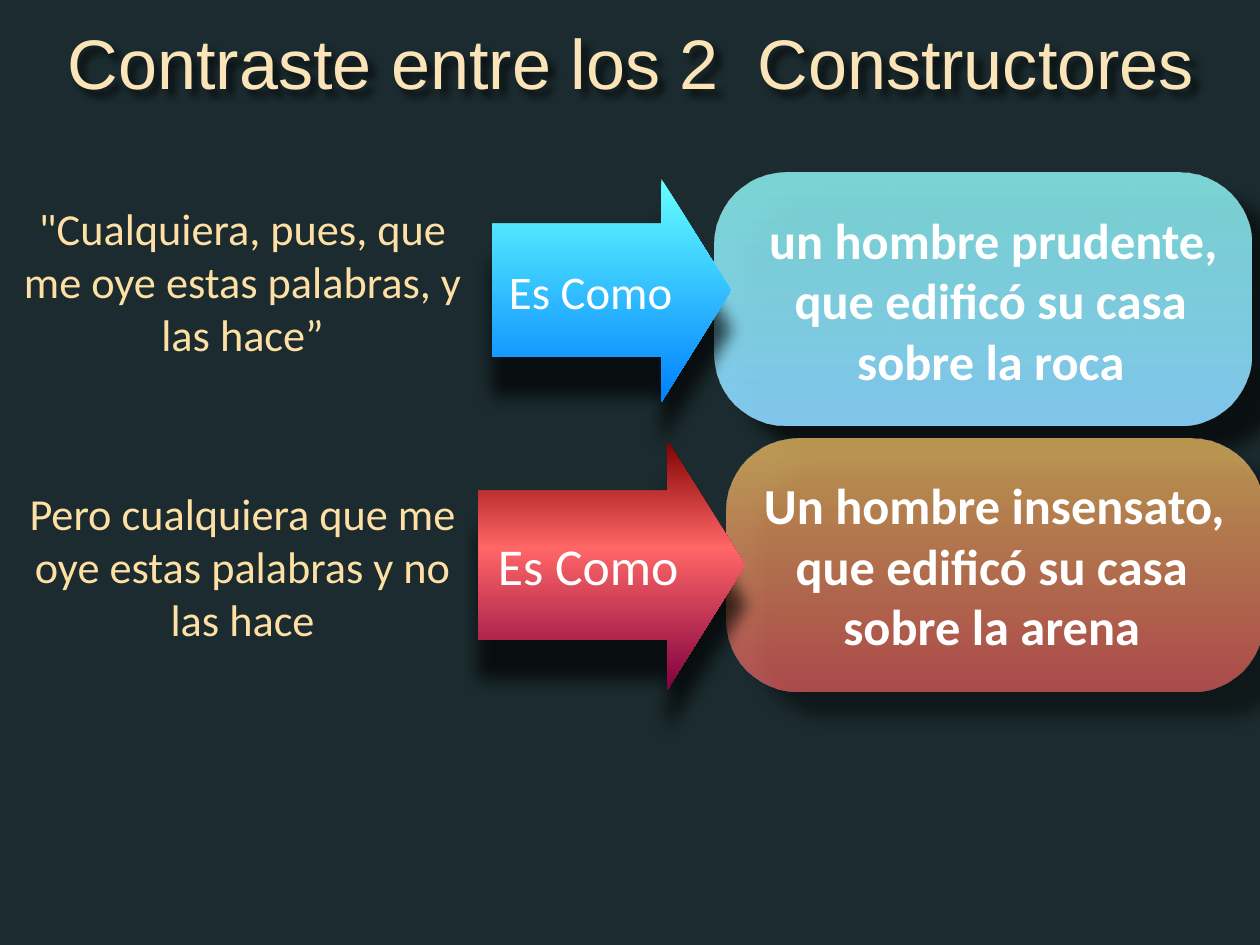
from pptx import Presentation
from pptx.dml.color import RGBColor
from pptx.enum.shapes import MSO_SHAPE as SHAPE
from pptx.enum.text import MSO_ANCHOR as ANCHOR, MSO_AUTO_SIZE as AUTO, PP_ALIGN as ALIGN
from pptx.oxml import parse_xml
from pptx.oxml.ns import nsdecls
from pptx.util import Inches, Pt

# Content: boxes are left, top, width, height in percent of the slide
TITLE = "Contraste entre los 2  Constructores"
TITLE_BOX = (1.7, 2.06, 96.8, 8.8)
BUILDERS = [
    dict(quote='"Cualquiera, pues, que me oye estas palabras, y las hace”',
         quote_box=(1.3, 21.3, 35.9, 16.8),
         result="un hombre prudente, que edificó su casa sobre la roca",
         card=(56.68, 18.28, 42.62, 26.8), text_width=40.65,
         link="Es Como", arrow=(39.03, 18.93, 18.99, 23.62), look="wise"),
    dict(quote="Pero cualquiera que me oye estas palabras y no las hace",
         quote_box=(1.3, 51.45, 35.9, 16.8),
         result="Un hombre insensato, que edificó su casa sobre la arena",
         card=(57.67, 46.39, 42.62, 26.8), text_width=38.82,
         link="Es Como", arrow=(37.9, 46.58, 21.24, 26.43), look="foolish"),
]

# Theme: gradient stops are position, colour, opacity (all in percent)
THEME = dict(
    bg="1B2B2F", title="FCE4B9", quote="FEE0A4", white="FFFFFF", shadow="000000",
    title_font="Arial", font="Calibri", title_size=57, quote_size=36, result_size=41,
    wise=dict(card=[(0, "94FFFE", 80), (100, "8BD5FE", 93)],
              arrow=[(0, "66FFFF", 100), (100, "0080FF", 100)], link_size=38),
    foolish=dict(card=[(0, "FFCC66", 71), (100, "FF6666", 66)],
                 arrow=[(0, "800000", 100), (43, "FF6666", 100), (100, "800040", 100)],
                 link_size=42),
)
CARD_ROUND, CARD_PAD = 0.283, 1.65
SHAFT, HEAD, LABEL_SHARE = 0.596, 0.312, 0.827

prs = Presentation()
prs.slide_width, prs.slide_height = Inches(14.22), Inches(10.67)


def place(box):
    """Turn percentages of the slide into lengths."""
    sides = (prs.slide_width, prs.slide_height) * 2
    return [int(side * share / 100) for side, share in zip(sides, box)]


def write(sp, text, *, size, color, font=THEME["font"], bold=False,
          anchor=ANCHOR.TOP, indent=0):
    tf = sp.text_frame
    tf.word_wrap, tf.auto_size, tf.vertical_anchor = True, AUTO.NONE, anchor
    tf.margin_left = tf.margin_top = tf.margin_right = tf.margin_bottom = 0
    p = tf.paragraphs[0]
    p.alignment = ALIGN.CENTER
    if indent:
        p._p.get_or_add_pPr().set("indent", str(Inches(indent)))
    r = p.add_run()
    r.text = text
    r.font.name, r.font.size, r.font.bold = font, Pt(size), bold
    r.font.color.rgb = RGBColor.from_string(color)


def add_shadow(sp, angle, blur=14, dist=32):
    sp.shadow.inherit = False
    effects = sp._element.spPr.find("{*}effectLst")
    effects.append(parse_xml(
        f'<a:outerShdw {nsdecls("a")} blurRad="{Pt(blur)}" dist="{Pt(dist)}" '
        f'dir="{angle * 60000}" algn="ctr" rotWithShape="0">'
        f'<a:srgbClr val="{THEME["shadow"]}"><a:alpha val="68000"/></a:srgbClr>'
        '</a:outerShdw>'))


def add_gradient_shape(shapes, kind, box, adjust, stops, shadow_angle):
    sp = shapes.add_shape(kind, *place(box))
    for i, value in enumerate(adjust):
        sp.adjustments[i] = value
    sp.line.fill.background()
    sp.fill.background()
    marks = "".join(
        f'<a:gs pos="{pos * 1000}"><a:srgbClr val="{color}">'
        f'<a:alpha val="{alpha * 1000}"/></a:srgbClr></a:gs>'
        for pos, color, alpha in stops)
    spPr = sp._element.spPr
    spPr.replace(spPr.find("{*}noFill"), parse_xml(
        f'<a:gradFill {nsdecls("a")} rotWithShape="1"><a:gsLst>{marks}</a:gsLst>'
        '<a:lin ang="5400000" scaled="0"/></a:gradFill>'))
    add_shadow(sp, shadow_angle)


def add_text(shapes, box, text, **fmt):
    write(shapes.add_textbox(*place(box)), text, **fmt)


# Background and title
s = prs.slides.add_slide(prs.slide_layouts[5])
s.background.fill.solid()
s.background.fill.fore_color.rgb = RGBColor.from_string(THEME["bg"])
title = s.shapes.title
title.left, title.top, title.width, title.height = place(TITLE_BOX)
write(title, TITLE, size=THEME["title_size"], color=THEME["title"],
      font=THEME["title_font"])
add_shadow(title, 45, blur=6, dist=6)

# One row per builder: quote, result card, arrow
for b in BUILDERS:
    look = THEME[b["look"]]
    add_text(s.shapes, b["quote_box"], b["quote"],
             size=THEME["quote_size"], color=THEME["quote"])

    card = s.shapes.add_group_shape().shapes
    x, y, w, h = b["card"]
    add_gradient_shape(card, SHAPE.ROUNDED_RECTANGLE, b["card"], [CARD_ROUND],
                       look["card"], 38)
    add_text(card, (x + CARD_PAD, y, b["text_width"], h), b["result"],
             size=THEME["result_size"], color=THEME["white"], bold=True,
             anchor=ANCHOR.MIDDLE, indent=0.06)

    arrow = s.shapes.add_group_shape().shapes
    x, y, w, h = b["arrow"]
    add_gradient_shape(arrow, SHAPE.RIGHT_ARROW, b["arrow"], [SHAFT, HEAD],
                       look["arrow"], 90)
    add_text(arrow, (x, y + h * (1 - SHAFT) / 2, w * LABEL_SHARE, h * SHAFT), b["link"],
             size=look["link_size"], color=THEME["white"], anchor=ANCHOR.MIDDLE)

prs.save("out.pptx")
